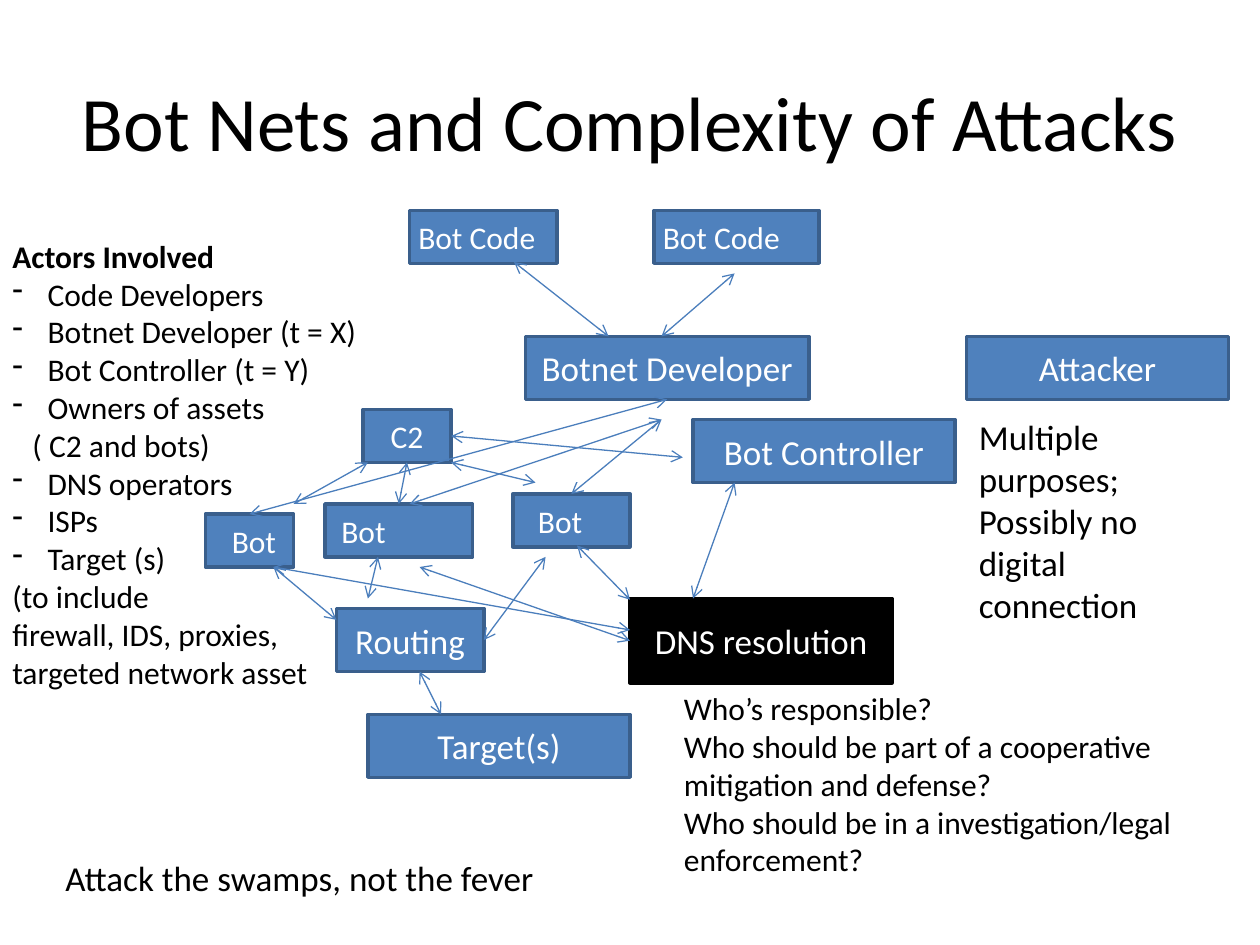
from lxml.etree import SubElement
from pptx import Presentation
from pptx.dml.color import RGBColor as Rgb
from pptx.enum.shapes import MSO_CONNECTOR as Connector, MSO_SHAPE as Shape
from pptx.enum.text import MSO_ANCHOR as Anchor, PP_ALIGN as Align
from pptx.oxml.ns import qn
from pptx.util import Pt

SCALE = 9144
COLORS = {"fill": "4F81BD", "edge": "3A5F8C", "arrow": "4B7EBC", "black": "000000", "white": "FFFFFF"}
TOP, LEFT, BOTTOM, RIGHT = range(4)
CENTERED = {"alignment": Align.CENTER}

BOXES = {
    "first bot": ("Bot", 163, 408, 70, 42, 18, 21),
    "dns": ("DNS resolution", 500, 475, 208, 67, 20, None),
    "right code": ("Bot Code", 519, 167, 131, 42, 18, 7),
    "left code": ("Bot Code", 325, 167, 117, 42, 18, 7),
    "routing": ("Routing", 267, 483, 117, 50, 20, None),
    "developer": ("Botnet Developer", 417, 267, 225, 50, 20, None),
    "third bot": ("Bot", 407, 392, 93, 42, 18, 20),
    "second bot": ("Bot", 258, 400, 117, 42, 18, 13),
    "targets": ("Target(s)", 292, 567, 208, 50, 20, None),
    "controller": ("Bot Controller", 550, 333, 208, 50, 20, None),
    "c2": ("C2", 288, 325, 70, 42, 18, None),
    "attacker": ("Attacker", 767, 267, 208, 50, 20, None),
}

ARROWS = [
    ((583, 383), (550, 475)),
    ((458, 433), (500, 476)),
    ((542, 363), ("c2", RIGHT)),
    ((300, 442), (292, 475)),
    ((217, 450), (267, 492)),
    ((433, 442), ("routing", RIGHT)),
    ((333, 533), (350, 567)),
    ((292, 367), (233, 400)),
    (("c2", BOTTOM), ("second bot", TOP)),
    ((358, 367), (425, 383)),
    (("developer", BOTTOM), ("first bot", TOP)),
    ((525, 333), (325, 400)),
    ((525, 333), ("third bot", TOP)),
    ((583, 217), (525, 267)),
    ((408, 208), (483, 267)),
    (("dns", LEFT), (333, 450)),
    ((217, 450), (500, 500)),
]

PURPOSES = ["Multiple purposes;", "Possibly no", "digital", "connection"]
QUESTIONS = [
    "Who’s responsible?",
    "Who should be part of a cooperative mitigation and defense?",
    "Who should be in a investigation/legal enforcement?",
]
ACTORS = [
    ("Actors Involved", "heading"),
    ("Code Developers", "bullet"),
    ("Botnet Developer (t = X)", "bullet"),
    ("Bot Controller (t = Y)", "bullet"),
    ("Owners of assets", "bullet"),
    ("( C2 and bots)", "indent"),
    ("DNS operators", "bullet"),
    ("ISPs", "bullet"),
    ("Target (s)", "bullet"),
    ("(to include", "plain"),
    ("firewall, IDS, proxies, targeted network asset", "plain"),
]


def px(*lengths):
    """Turn lengths in px into a list of EMU."""
    return [length * SCALE for length in lengths]


def color(name):
    """Look up a named colour."""
    return Rgb.from_string(COLORS[name])


def apply(target, values):
    """Set each attribute in a dict of format values."""
    for name, value in values.items():
        setattr(target, name, value)


def write(para, text, size, ink, bold=False, **values):
    """Fill a paragraph with one formatted span."""
    span = para.add_run()
    span.text = text
    apply(span.font, {"name": "Calibri", "size": Pt(size), "bold": bold})
    span.font.color.rgb = color(ink)
    apply(para, values)


def indent(para, style):
    """Indent a list paragraph and give it a dash where it is a bullet."""
    props = para._p.get_or_add_pPr()
    if style == "bullet":
        hang, = px(28)
        props.set("marL", str(hang))
        props.set("indent", str(-hang))
        SubElement(props, qn("a:buFontTx"))
        SubElement(props, qn("a:buChar")).set("char", "-")
    elif style == "indent":
        props.set("marL", str(px(16)[0]))


def add_text(page, place, lines, size, anchor=Anchor.TOP, wrap=True, **values):
    """Add a text box with a paragraph for each (text, style) or plain line."""
    frame = page.shapes.add_textbox(*px(*place)).text_frame
    apply(frame, {"word_wrap": wrap, "vertical_anchor": anchor})
    for index, line in enumerate(lines):
        text, style = (line, "plain") if isinstance(line, str) else line
        para = frame.add_paragraph() if index else frame.paragraphs[0]
        write(para, text, size, "black", style == "heading", **values)
        indent(para, style)


def add_box(page, text, left, top, width, height, size, inset, fill, edge):
    """Add a labelled rectangle, centred or with a left inset."""
    box = page.shapes.add_shape(Shape.RECTANGLE, *px(left, top, width, height))
    box.shadow.inherit = False
    box.fill.solid()
    box.fill.fore_color.rgb = color(fill)
    box.line.color.rgb = color(edge)
    box.line.width = Pt(2)
    frame = box.text_frame
    apply(frame, {"word_wrap": True, "vertical_anchor": Anchor.MIDDLE})
    if inset is not None:
        apply(frame, {"margin_left": px(inset)[0], "margin_right": 0})
    alignment = Align.CENTER if inset is None else Align.LEFT
    write(frame.paragraphs[0], text, size, "white", alignment=alignment)
    return box


def add_arrow(page, boxes, start, end):
    """Add a two-headed arrow between points or (box, side) joints."""
    points = [(0, 0) if joint[0] in boxes else joint for joint in (start, end)]
    arrow = page.shapes.add_connector(Connector.STRAIGHT, *px(*points[0], *points[1]))
    for joint, connect in ((start, arrow.begin_connect), (end, arrow.end_connect)):
        if joint[0] in boxes:
            connect(boxes[joint[0]], joint[1])
    arrow.line.color.rgb = color("arrow")
    arrow.line.width = Pt(0.75)
    outline = arrow.line._get_or_add_ln()
    for tag in ("a:headEnd", "a:tailEnd"):
        SubElement(outline, qn(tag)).set("type", "arrow")
    SubElement(arrow._element.spPr, qn("a:effectLst"))


def main():
    """Build the slide and save it."""
    deck = Presentation()
    deck.slide_width, deck.slide_height = px(1000, 750)
    page = deck.slides.add_slide(deck.slide_layouts[6])
    add_text(page, (50, 33, 900, 125), ["Bot Nets and Complexity of Attacks"], 44, Anchor.MIDDLE, **CENTERED)
    boxes = {}
    for name, values in BOXES.items():
        fill, edge = ("black", "black") if name == "dns" else ("fill", "edge")
        boxes[name] = add_box(page, *values, fill, edge)
    for start, end in ARROWS:
        add_arrow(page, boxes, start, end)
    add_text(page, (767, 325, 192, 209), PURPOSES, 20)
    add_text(page, (533, 542, 467, 162), QUESTIONS, 18)
    add_text(page, (0, 183, 317, 374), ACTORS, 18)
    add_text(page, (42, 675, 434, 44), ["Attack the swamps, not the fever"], 20, wrap=False)
    deck.save("out.pptx")


if __name__ == "__main__":
    main()
